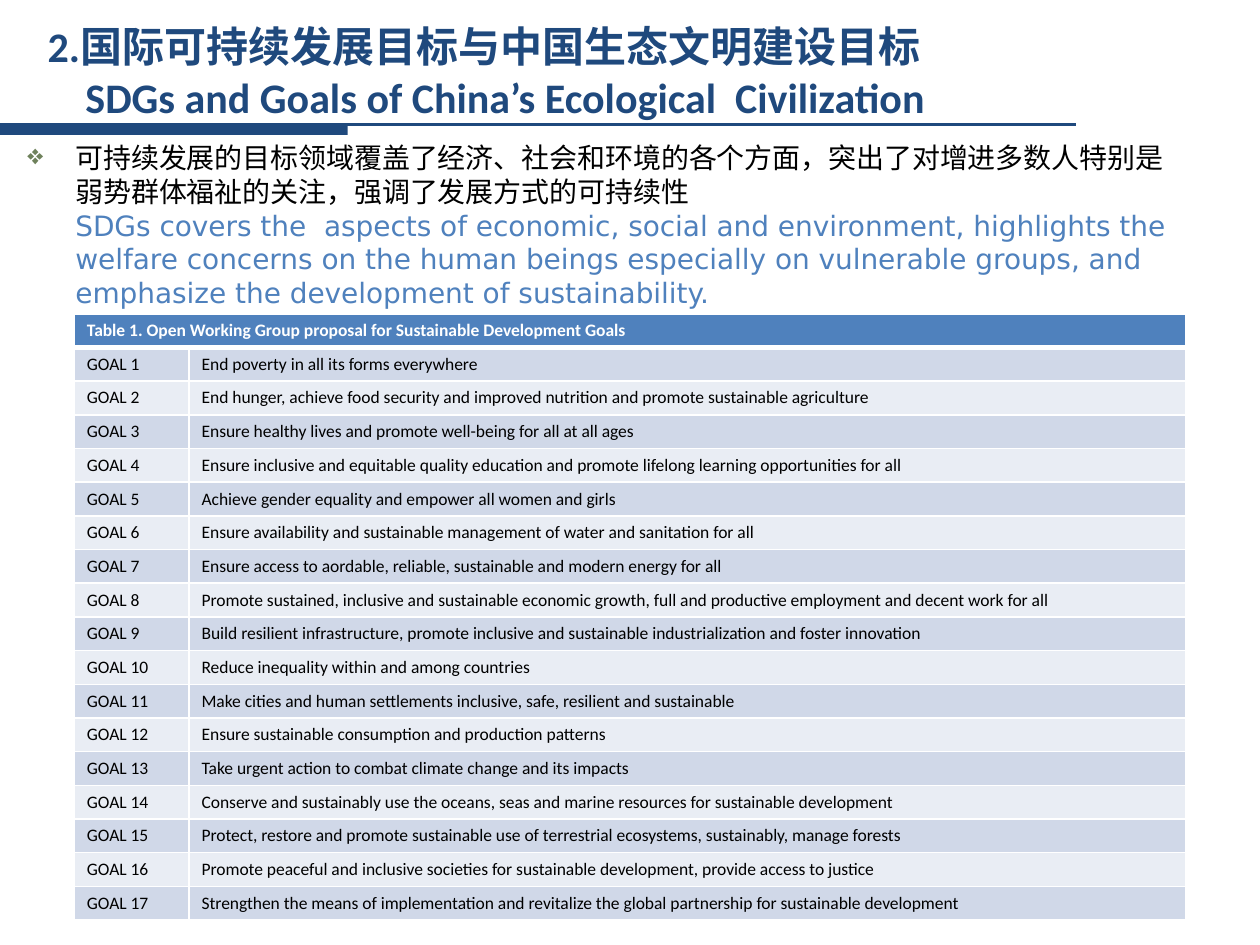
import pptx
import pptx.dml.color
import pptx.enum.shapes
import pptx.enum.text
import pptx.oxml.ns
import pptx.util
from lxml import etree
from pptx.util import Inches

RGBColor = pptx.dml.color.RGBColor
NAVY = RGBColor(0x1F, 0x49, 0x7D)
BLUE = RGBColor(0x4F, 0x81, 0xBD)
GREEN = RGBColor(0x6E, 0x81, 0x5B)
BLACK = RGBColor(0, 0, 0)
WHITE = RGBColor(0xFF, 0xFF, 0xFF)
BANDS = (RGBColor(0xD0, 0xD8, 0xE8), RGBColor(0xE9, 0xED, 0xF4))

TITLE_LINES = (
    "2.国际可持续发展目标与中国生态文明建设目标",
    "SDGs and Goals of China’s Ecological  Civilization",
)
SUMMARY_CHINESE = (
    "可持续发展的目标领域覆盖了经济、社会和环境的各个方面，"
    "突出了对增进多数人特别是弱势群体福祉的关注，强调了发展方式的可持续性"
)
SUMMARY_ENGLISH = (
    "SDGs covers the  aspects of economic, social and environment, highlights "
    "the welfare concerns on the human beings especially on vulnerable groups, "
    "and emphasize the development of sustainability."
)
TABLE_TITLE = "Table 1. Open Working Group proposal for Sustainable Development Goals"
GOALS = (
    "End poverty in all its forms everywhere",
    "End hunger, achieve food security and improved nutrition and promote sustainable agriculture",
    "Ensure healthy lives and promote well-being for all at all ages",
    "Ensure inclusive and equitable quality education and promote lifelong learning opportunities for all",
    "Achieve gender equality and empower all women and girls",
    "Ensure availability and sustainable management of water and sanitation for all",
    "Ensure access to aordable, reliable, sustainable and modern energy for all",
    "Promote sustained, inclusive and sustainable economic growth, full and productive employment and decent work for all",
    "Build resilient infrastructure, promote inclusive and sustainable industrialization and foster innovation",
    "Reduce inequality within and among countries",
    "Make cities and human settlements inclusive, safe, resilient and sustainable",
    "Ensure sustainable consumption and production patterns",
    "Take urgent action to combat climate change and its impacts",
    "Conserve and sustainably use the oceans, seas and marine resources for sustainable development",
    "Protect, restore and promote sustainable use of terrestrial ecosystems, sustainably, manage forests",
    "Promote peaceful and inclusive societies for sustainable development, provide access to justice",
    "Strengthen the means of implementation and revitalize the global partnership for sustainable development",
)


def add_element(parent, tag, **attributes):
    return etree.SubElement(parent, pptx.oxml.ns.qn(tag), attributes)


def set_font(paragraph, name, size, color, bold=False):
    font = paragraph.font
    font.name, font.size, font.bold = name, pptx.util.Pt(size), bold
    font.color.rgb = color


def add_text_frame(slide, left, top, width, height):
    box = slide.shapes.add_textbox(
        Inches(left), Inches(top), Inches(width), Inches(height))
    box.text_frame.word_wrap = True
    return box.text_frame


def add_title_rule(slide):
    """Thin line with a thick bar under its left part."""
    top = Inches(0.99)
    rule = slide.shapes.add_connector(
        pptx.enum.shapes.MSO_CONNECTOR.STRAIGHT, 0, top, Inches(8.54), top)
    rule.line.color.rgb = NAVY
    rule.line.width = pptx.util.Pt(1.5)
    add_element(rule._element.spPr, "a:effectLst")
    bar = slide.shapes.add_shape(
        pptx.enum.shapes.MSO_SHAPE.RECTANGLE, 0, top, Inches(2.76), Inches(0.08))
    bar.shadow.inherit = False
    bar.fill.solid()
    bar.fill.fore_color.rgb = NAVY
    bar.line.fill.background()


def add_title(slide):
    frame = add_text_frame(slide, 0.28, 0.21, 9.76, 0.71)
    frame.vertical_anchor = pptx.enum.text.MSO_ANCHOR.MIDDLE
    frame.text = "\n".join(TITLE_LINES)
    for paragraph in frame.paragraphs:
        set_font(paragraph, "Calibri", 24, NAVY, bold=True)
    frame.paragraphs[1]._p.get_or_add_pPr().set("marL", str(Inches(0.3)))


def add_bullet(paragraph, character, color, indent):
    properties = paragraph._p.get_or_add_pPr()
    properties.set("marL", str(indent))
    properties.set("indent", str(-indent))
    bullet_color = add_element(properties, "a:buClr")
    add_element(bullet_color, "a:srgbClr", val=str(color))
    add_element(properties, "a:buChar", char=character)


def add_summary(slide):
    paragraph = add_text_frame(slide, 0.12, 1.07, 9.37, 1.26).paragraphs[0]
    add_bullet(paragraph, "❖", GREEN, Inches(0.38))
    paragraph.space_after = pptx.util.Pt(12)
    set_font(paragraph, "DejaVu Sans", 16, BLACK)
    paragraph.add_run().text = SUMMARY_CHINESE
    paragraph.add_line_break()
    english = paragraph.add_run()
    english.text = SUMMARY_ENGLISH
    english.font.color.rgb = BLUE


def set_borders(cell, top=1, bottom=1):
    """White borders; widths in points."""
    properties = cell._tc.get_or_add_tcPr()
    for side, width in (("L", 1), ("R", 1), ("T", top), ("B", bottom)):
        line = add_element(properties, f"a:ln{side}", w=str(pptx.util.Pt(width)))
        fill = add_element(line, "a:solidFill")
        add_element(fill, "a:srgbClr", val=str(WHITE))


def style_cell(cell, fill, color, bold=False, **borders):
    set_borders(cell, **borders)
    cell.fill.solid()
    cell.fill.fore_color.rgb = fill
    set_font(cell.text_frame.paragraphs[0], "Calibri", 10, color, bold)


def add_goal_table(slide):
    table = slide.shapes.add_table(
        len(GOALS) + 1, 2, Inches(0.59), Inches(2.49), Inches(8.82), Inches(4.8)).table
    table.columns[0].width = Inches(0.91)
    table.columns[1].width = Inches(7.91)

    header = table.cell(0, 0)
    header.merge(table.cell(0, 1))
    header.text = TABLE_TITLE
    for column in range(2):
        style_cell(table.cell(0, column), BLUE, WHITE, bold=True, bottom=3)

    for number, goal in enumerate(GOALS, start=1):
        for column, text in enumerate((f"GOAL {number}", goal)):
            cell = table.cell(number, column)
            cell.text = text
            style_cell(cell, BANDS[(number - 1) % 2], BLACK,
                       top=3 if number == 1 else 1)


def main():
    presentation = pptx.Presentation()
    presentation.slide_width = Inches(10)
    presentation.slide_height = Inches(7.5)
    slide = presentation.slides.add_slide(presentation.slide_layouts[6])
    add_title_rule(slide)
    add_summary(slide)
    add_title(slide)
    add_goal_table(slide)
    presentation.save("out.pptx")


if __name__ == "__main__":
    main()
